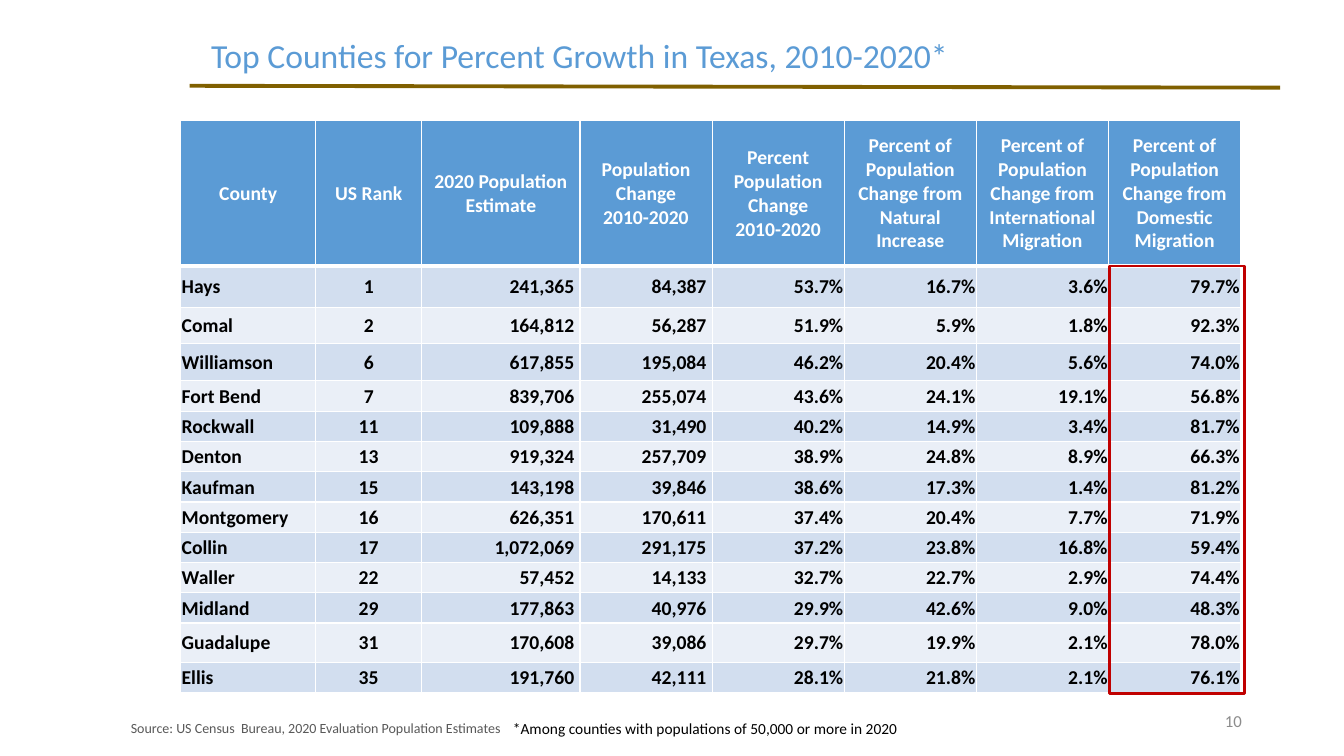
import dataclasses

import lxml.etree
import pptx
import pptx.dml.color
import pptx.enum.shapes
import pptx.enum.text
import pptx.oxml.ns
import pptx.util

Pt = pptx.util.Pt
Align = pptx.enum.text.PP_ALIGN
Anchor = pptx.enum.text.MSO_ANCHOR
qn = pptx.oxml.ns.qn

FONT = "Calibri"
BLUE = "5B9BD5"
WHITE = "FFFFFF"
BLACK = "000000"
BANDS = ("D2DEEF", "EAEFF7")
HEADER_HEIGHT = 104.4


@dataclasses.dataclass(frozen=True)
class Column:
    heading: str
    width: float = 94.4
    align: Align = Align.RIGHT
    right_margin: float = 0.7


@dataclasses.dataclass(frozen=True)
class County:
    values: tuple[str, ...]
    height: float = 21.6


@dataclasses.dataclass(frozen=True)
class Caption:
    text: str
    left: float
    top: float
    width: float
    height: float
    size: float
    color: str
    align: Align = Align.LEFT
    anchor: Anchor = Anchor.TOP
    line_spacing: float = 1.0


COLUMNS = (
    Column("County", 96.4, Align.LEFT),
    Column("US Rank", 75.8, Align.CENTER),
    Column("2020 Population Estimate", 113, right_margin=4),
    Column("Population Change\n2010-2020", right_margin=4),
    Column("Percent Population Change\n2010-2020"),
    Column("Percent of Population Change from Natural Increase"),
    Column("Percent of Population Change from International Migration"),
    Column("Percent of Population Change from Domestic Migration"),
)

COUNTIES = (
    County(("Hays", "1", "241,365", "84,387", "53.7%", "16.7%", "3.6%", "79.7%"), 29.5),
    County(("Comal", "2", "164,812", "56,287", "51.9%", "5.9%", "1.8%", "92.3%"), 26),
    County(("Williamson", "6", "617,855", "195,084", "46.2%", "20.4%", "5.6%", "74.0%"), 26),
    County(("Fort Bend", "7", "839,706", "255,074", "43.6%", "24.1%", "19.1%", "56.8%"), 22.3),
    County(("Rockwall", "11", "109,888", "31,490", "40.2%", "14.9%", "3.4%", "81.7%")),
    County(("Denton", "13", "919,324", "257,709", "38.9%", "24.8%", "8.9%", "66.3%")),
    County(("Kaufman", "15", "143,198", "39,846", "38.6%", "17.3%", "1.4%", "81.2%")),
    County(("Montgomery", "16", "626,351", "170,611", "37.4%", "20.4%", "7.7%", "71.9%")),
    County(("Collin", "17", "1,072,069", "291,175", "37.2%", "23.8%", "16.8%", "59.4%")),
    County(("Waller", "22", "57,452", "14,133", "32.7%", "22.7%", "2.9%", "74.4%")),
    County(("Midland", "29", "177,863", "40,976", "29.9%", "42.6%", "9.0%", "48.3%")),
    County(("Guadalupe", "31", "170,608", "39,086", "29.7%", "19.9%", "2.1%", "78.0%"), 28.1),
    County(("Ellis", "35", "191,760", "42,111", "28.1%", "21.8%", "2.1%", "76.1%")),
)

CAPTIONS = (
    Caption("*Among counties with populations of 50,000 or more in 2020",
            359.3, 509.8, 491.8, 20.9, 11, BLACK),
    Caption("Source: US Census  Bureau, 2020 Evaluation Population Estimates",
            86.4, 509.8, 360, 20.2, 10, "595959", line_spacing=1.07),
    Caption("10", 678.2, 500.4, 216, 28.8, 12, "8C8C8C", Align.RIGHT, Anchor.MIDDLE),
)


def rgb(color: str) -> pptx.dml.color.RGBColor:
    return pptx.dml.color.RGBColor.from_string(color)


def style_text(frame, size: float, color: str, align: Align, bold: bool = False) -> None:
    for paragraph in frame.paragraphs:
        paragraph.alignment = align
        paragraph.font.name = FONT
        paragraph.font.size = Pt(size)
        paragraph.font.bold = bold
        paragraph.font.color.rgb = rgb(color)


def place(shape, left: float, top: float, width: float, height: float) -> None:
    shape.left, shape.top = Pt(left), Pt(top)
    shape.width, shape.height = Pt(width), Pt(height)


def add_title(slide) -> None:
    title = slide.shapes.title
    place(title, 137.5, 21.6, 553, 36)
    frame = title.text_frame
    frame.text = "Top Counties for Percent Growth in Texas, 2010-2020*"
    frame.word_wrap = True
    frame.auto_size = pptx.enum.text.MSO_AUTO_SIZE.NONE
    frame.vertical_anchor = Anchor.TOP
    style_text(frame, 24, BLUE, Align.CENTER)


def add_title_rule(slide) -> None:
    rule = slide.shapes.add_connector(
        pptx.enum.shapes.MSO_CONNECTOR.STRAIGHT, Pt(135.4), Pt(61.3), Pt(914.4), Pt(62.6))
    rule.line.color.rgb = rgb("806000")
    rule.line.width = Pt(2.75)
    lxml.etree.SubElement(rule._element.spPr, qn("a:effectLst"))


def add_borders(cell, top: float, bottom: float) -> None:
    properties = cell._tc.get_or_add_tcPr()
    for side, width in (("L", 1), ("R", 1), ("T", top), ("B", bottom)):
        border = lxml.etree.SubElement(properties, qn(f"a:ln{side}"), w=str(Pt(width)))
        fill = lxml.etree.SubElement(border, qn("a:solidFill"))
        lxml.etree.SubElement(fill, qn("a:srgbClr"), val=WHITE)


def fill_cell(cell, text: str, column: Column, row: int) -> None:
    is_header = row == 0
    add_borders(cell, top=3 if row == 1 else 1, bottom=3 if is_header else 1)
    cell.fill.solid()
    cell.fill.fore_color.rgb = rgb(BLUE if is_header else BANDS[(row - 1) % 2])
    cell.vertical_anchor = Anchor.MIDDLE
    cell.margin_left = cell.margin_top = Pt(0.7)
    cell.margin_right = Pt(0.7 if is_header else column.right_margin)
    cell.margin_bottom = Pt(0)
    cell.text_frame.text = text
    style_text(cell.text_frame, 14, WHITE if is_header else BLACK,
               Align.CENTER if is_header else column.align, bold=True)


def add_county_table(slide) -> None:
    headings = County(tuple(column.heading for column in COLUMNS), HEADER_HEIGHT)
    rows = (headings, *COUNTIES)
    table = slide.shapes.add_table(
        len(rows), len(COLUMNS), Pt(129.1), Pt(85.7),
        Pt(sum(column.width for column in COLUMNS)),
        Pt(sum(row.height for row in rows))).table
    for index, column in enumerate(COLUMNS):
        table.columns[index].width = Pt(column.width)
    for row_index, row in enumerate(rows):
        table.rows[row_index].height = Pt(row.height)
        for index, (text, column) in enumerate(zip(row.values, COLUMNS)):
            fill_cell(table.cell(row_index, index), text, column, row_index)


def add_caption(slide, caption: Caption) -> None:
    frame = slide.shapes.add_textbox(
        Pt(caption.left), Pt(caption.top), Pt(caption.width), Pt(caption.height)).text_frame
    frame.word_wrap = True
    frame.vertical_anchor = caption.anchor
    frame.text = caption.text
    frame.paragraphs[0].line_spacing = caption.line_spacing
    style_text(frame, caption.size, caption.color, caption.align)


def add_domestic_highlight(slide) -> None:
    highlight = slide.shapes.add_shape(
        pptx.enum.shapes.MSO_SHAPE.RECTANGLE, Pt(792.7), Pt(190.1), Pt(96.5), Pt(305.3))
    highlight.shadow.inherit = False
    highlight.fill.background()
    highlight.line.color.rgb = rgb("C00000")
    highlight.line.width = Pt(2)


def main() -> None:
    deck = pptx.Presentation()
    deck.slide_width, deck.slide_height = Pt(960), Pt(540)
    slide = deck.slides.add_slide(deck.slide_layouts[5])
    add_title_rule(slide)
    add_title(slide)
    add_county_table(slide)
    for caption in CAPTIONS:
        add_caption(slide, caption)
    add_domestic_highlight(slide)
    deck.save("out.pptx")


if __name__ == "__main__":
    main()
